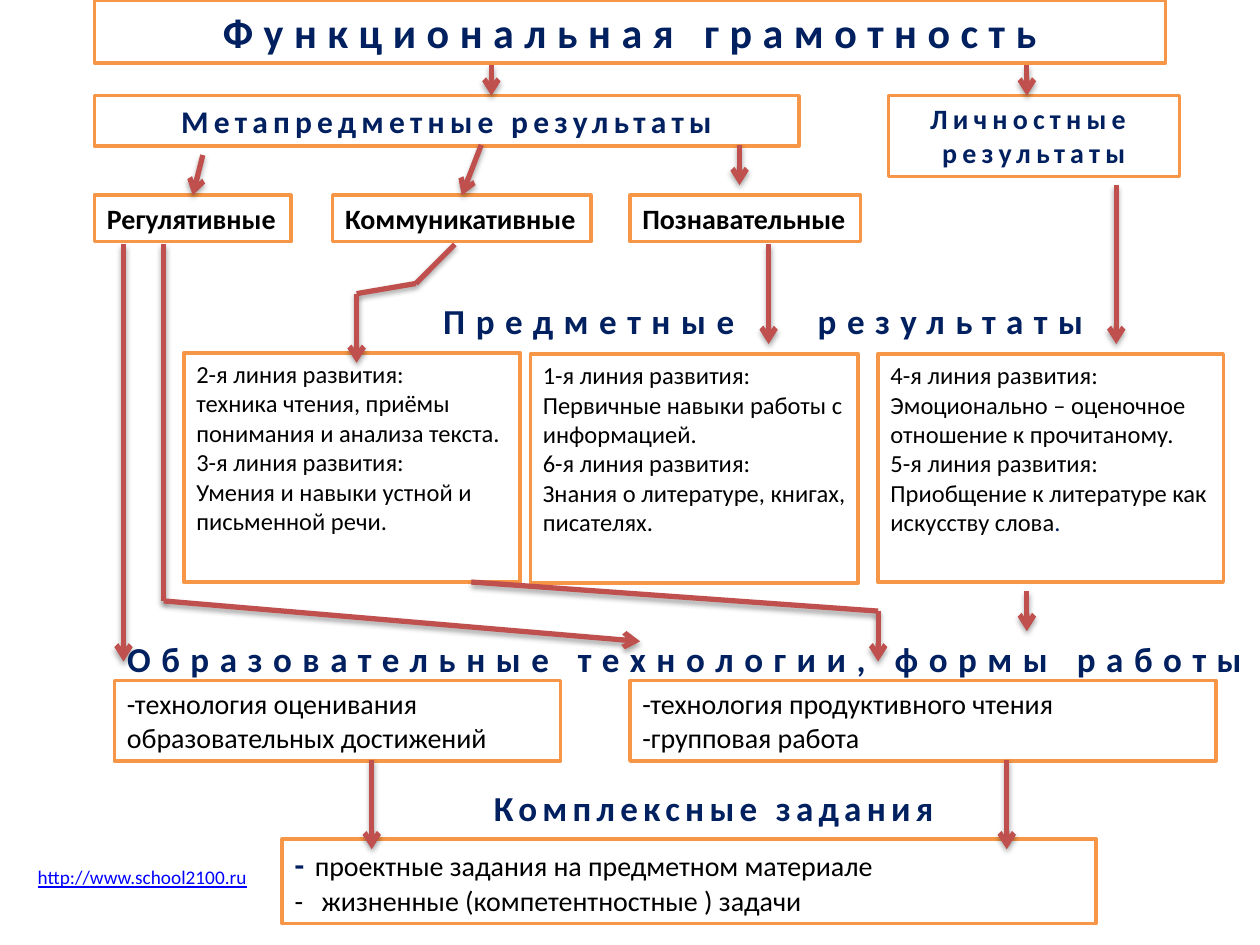
"""Build the slide on functional literacy as a flow of boxes and arrows."""
from lxml import etree
from pptx import Presentation
from pptx.dml.color import RGBColor
from pptx.enum.shapes import MSO_CONNECTOR, MSO_SHAPE
from pptx.enum.text import MSO_ANCHOR, PP_ALIGN
from pptx.oxml.ns import qn
from pptx.util import Pt

RECT, LINE = MSO_SHAPE.RECTANGLE, MSO_CONNECTOR.STRAIGHT
TOP, MID, LEFT = MSO_ANCHOR.TOP, PP_ALIGN.CENTER, PP_ALIGN.LEFT
COLORS = {"white": "FFFFFF", "edge": "F79646", "arrow": "C0504D",
          "navy": "002060", "ink": "000000", "link": "0000FF"}
BASE = {"size": 16, "bold": False, "underline": False, "color": "ink", "gap": 0}
HEAD = {"bold": True, "color": "navy", "align": MID}
STYLES = {
    "title": {**HEAD, "size": 24, "gap": 6},
    "group": {**HEAD, "size": 18, "gap": 3},
    "person": {**HEAD, "gap": 3},
    "wide": {**HEAD, "size": 20, "gap": 6},
    "split": {**HEAD, "size": 20, "gap": 6, "align": LEFT, "tab": 214},
    "tasks": {**HEAD, "size": 20, "gap": 3},
    "skill": {"bold": True, "wrap": False},
    "course": {"size": 14},
    "body": {},
    "list": {"tab": 15.5},
    "link": {"size": 11, "underline": True, "color": "link"},
}
DASH = {"size": 18, "bold": True, "color": "navy", "gap": 6}

ROW1, ROW2, ROW3, ROW4 = 54.7, 111.6, 202.3, 388.8
BOXES = [
    ("title", (54, 0, 612, 36), ["Функциональная грамотность"]),
    ("group", (54, ROW1, 402.5, 28.8), ["Метапредметные результаты"]),
    ("person", (507.6, ROW1, 166.3, 46.1), ["Личностные ", "результаты"]),
    ("skill", (54, ROW2, 112.3, 26.6), ["Регулятивные"]),
    ("skill", (190.1, ROW2, 147.6, 26.6), ["Коммуникативные"]),
    ("skill", (360, ROW2, 131.8, 26.6), ["Познавательные"]),
    ("course", (105.1, 201.6, 192.2, 131), [
        "2-я линия развития:",
        "техника чтения, приёмы понимания и анализа текста.",
        "3-я линия развития:",
        "Умения и навыки устной и письменной речи."]),
    ("course", (303.1, ROW3, 187.2, 131), [
        "1-я линия развития:",
        "Первичные навыки работы с информацией.",
        "6-я линия развития:",
        "Знания о литературе, книгах, писателях."]),
    ("course", (501.8, ROW3, 197.3, 130.3), [
        "4-я линия развития:",
        "Эмоционально – оценочное отношение к прочитаному.",
        "5-я линия развития:",
        [("Приобщение к литературе как искусству слова", {}),
         (".", {"color": "navy"})]]),
    ("body", (65.5, ROW4, 254.9, 46.1),
     ["-технология оценивания образовательных достижений"]),
    ("body", (360, ROW4, 334.8, 46.1),
     ["-технология продуктивного чтения", "-групповая работа"]),
    ("list", (161.3, 479.5, 465.1, 48.2), [
        [("-", DASH), ("проектные задания на предметном материале", {})],
        "-\tжизненные (компетентностные ) задачи"]),
]
LABELS = [
    ("split", (246.2, 167.8, 445.7, 31.7), ["Предметные\tрезультаты"]),
    ("wide", (62.6, 360.7, 657.4, 31.7),
     ["Образовательные технологии, формы работы"]),
    ("tasks", (212.4, 445.7, 391, 31.7), ["Комплексные задания"]),
    ("link", (14.4, 491, 144.7, 20.9), ["http://www.school2100.ru"]),
]
ROUTES = [
    [(280.8, 37.4), (280.8, ROW1)],
    [(586.8, 37.4), (586.8, ROW1)],
    [(115.9, 88.6), "Регулятивные"],
    [(275, 82.8), "Коммуникативные"],
    [(422.6, 82.8), (422.6, 105.8)],
    [(637.9, 105.8), (637.9, 196.6)],
    [(439.2, 139.7), (439.2, 196.6)],
    [(259.9, 139.7), (237.6, 162), (203.8, 167.8), (203.8, 207.4)],
    [(586.8, 337.7), (586.8, 360.7)],
    [(269.3, 332.6), (501.8, 349.2), (501.8, 378)],
    [(575.3, 434.2), (575.3, 485.3)],
    [(212.4, 434.2), (212.4, 485.3)],
    [(70.6, 139.7), (70.6, 378)],
    [(93.6, 139.7), (93.6, 343.4), (365.8, 366.5)],
]


def rgb(name):
    return RGBColor.from_string(COLORS[name])


def add(node, tag, **attrs):
    return etree.SubElement(node, qn(tag), attrs)


def write(shape, kind, paras):
    style = {**BASE, **STYLES[kind]}
    frame = shape.text_frame
    frame.word_wrap = style.get("wrap", True)
    frame.vertical_anchor = TOP
    for i, item in enumerate(paras):
        para = frame.add_paragraph() if i else frame.paragraphs[0]
        para.alignment = style.get("align", LEFT)
        if "tab" in style:
            tabs = add(para._p.get_or_add_pPr(), "a:tabLst")
            add(tabs, "a:tab", pos=str(Pt(style["tab"])), algn="l")
        for text, extra in [(item, {})] if isinstance(item, str) else item:
            look = {**style, **extra}
            run = para.add_run()
            run.text = text
            form = {"name": "Calibri", "size": Pt(look["size"]),
                    "bold": look["bold"], "underline": look["underline"]}
            for key, value in form.items():
                setattr(run.font, key, value)
            run.font.color.rgb = rgb(look["color"])
            run._r.get_or_add_rPr().set("spc", str(look["gap"] * 100))


def draw(shapes, start, end, head):
    line = shapes.add_connector(LINE, *map(Pt, start + end))
    line.line.color.rgb = rgb("arrow")
    line.line.width = Pt(3)
    if head:
        add(line.line._get_or_add_ln(), "a:tailEnd", type="arrow")
    fx = add(line._element.spPr, "a:effectLst")
    shade = add(fx, "a:outerShdw", blurRad=str(Pt(3.1)), dist=str(Pt(1.8)),
                dir="5400000", rotWithShape="0")
    add(add(shade, "a:srgbClr", val=COLORS["ink"]), "a:alpha", val="35000")
    return line


def main():
    deck = Presentation()
    deck.slide_width, deck.slide_height = Pt(720), Pt(540)
    shapes = deck.slides.add_slide(deck.slide_layouts[6]).shapes
    named = {}
    for kind, place, paras in BOXES:
        box = shapes.add_shape(RECT, *map(Pt, place))
        box.shadow.inherit = False
        box.fill.solid()
        box.fill.fore_color.rgb = rgb("white")
        box.line.color.rgb = rgb("edge")
        box.line.width = Pt(2)
        write(box, kind, paras)
        if kind == "skill":
            named[paras[0]] = box, (place[0] + place[2] / 2, place[1])
    for route in ROUTES:
        for i, (start, end) in enumerate(zip(route, route[1:]), 2):
            goal, spot = named.get(end, (None, end))
            line = draw(shapes, start, spot, i == len(route))
            if goal:
                line.end_connect(goal, 0)
    for kind, place, paras in LABELS:
        write(shapes.add_textbox(*map(Pt, place)), kind, paras)
    deck.save("out.pptx")


if __name__ == "__main__":
    main()
